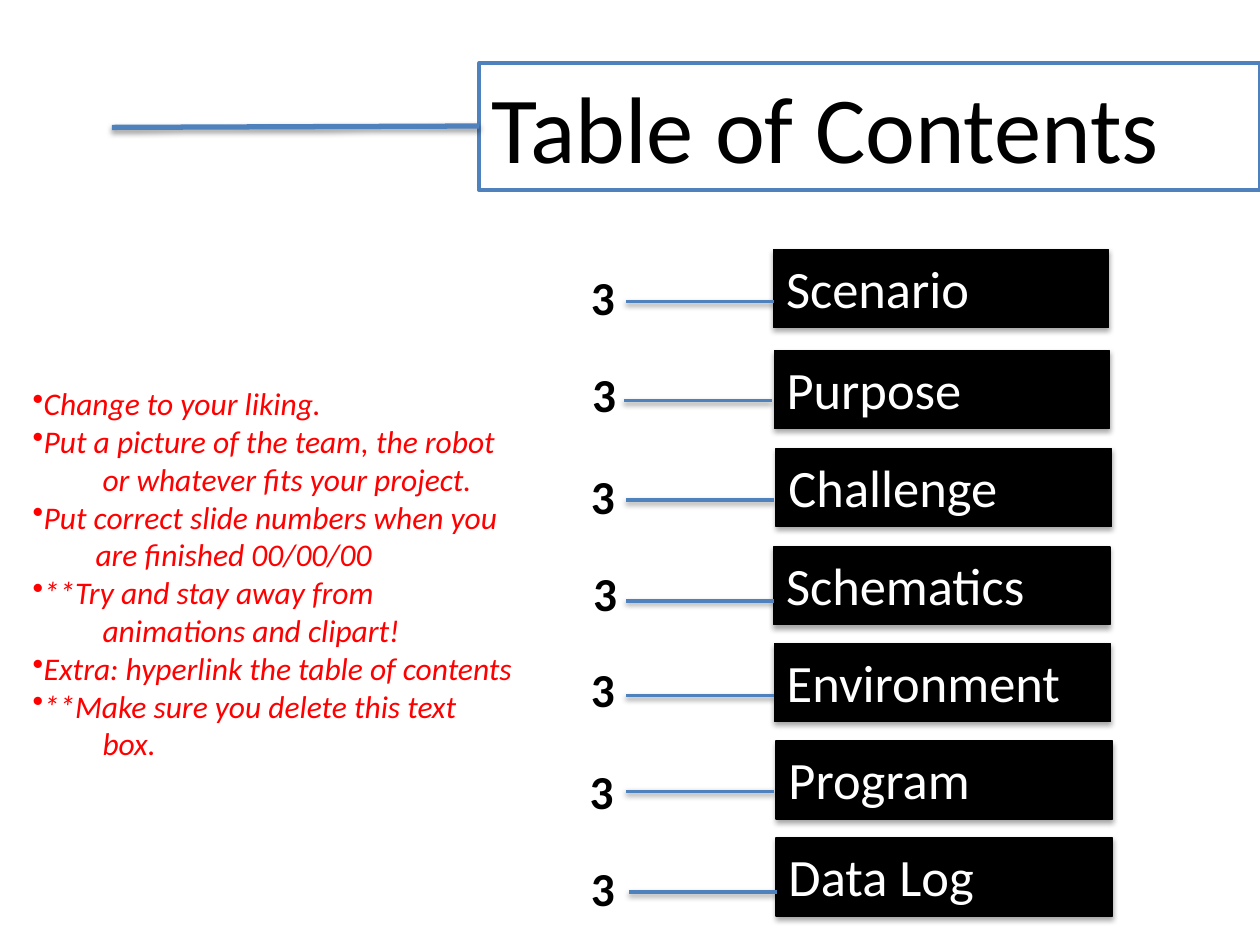
import pptx
import pptx.dml.color
import pptx.enum.shapes
import pptx.enum.text
import pptx.oxml
import pptx.oxml.ns
import pptx.util
from pptx.util import Pt

BLUE, BLACK, WHITE, RED = "4F81BD", "000000", "FFFFFF", "FF0000"


def add_text(shape, lines, size, color, bold=False, italic=False):
    """Write lines of (text, bullet, left margin) into a shape."""
    frame = shape.text_frame
    frame.word_wrap = True
    frame.vertical_anchor = pptx.enum.text.MSO_ANCHOR.TOP
    for i, (text, bullet, margin) in enumerate(lines):
        paragraph = frame.add_paragraph() if i else frame.paragraphs[0]
        paragraph.alignment = pptx.enum.text.PP_ALIGN.LEFT
        properties = paragraph._p.get_or_add_pPr()
        properties.set("marL", str(Pt(margin)))
        properties.set("indent", "0")
        if bullet:
            properties.append(pptx.oxml.parse_xml(
                f'<a:buChar {pptx.oxml.ns.nsdecls("a")} char="{bullet}"/>'))
        run = paragraph.add_run()
        run.text = text
        run.font.name = "Calibri"
        run.font.size = Pt(size)
        run.font.bold, run.font.italic = bold, italic
        run.font.color.rgb = pptx.dml.color.RGBColor.from_string(color)


def style(shape, line, width, fill=None, shadow=None):
    """Set line, fill and a downward shadow of (opacity %, distance)."""
    if fill:
        shape.shadow.inherit = False
        shape.fill.solid()
        shape.fill.fore_color.rgb = pptx.dml.color.RGBColor.from_string(fill)
    shape.line.color.rgb = pptx.dml.color.RGBColor.from_string(line)
    shape.line.width = Pt(width)
    if shadow:
        opacity, distance = shadow
        properties = shape._element.spPr
        for empty in properties.findall(pptx.oxml.ns.qn("a:effectLst")):
            properties.remove(empty)
        properties.append(pptx.oxml.parse_xml(
            f'<a:effectLst {pptx.oxml.ns.nsdecls("a")}>'
            f'<a:outerShdw blurRad="{Pt(3.1)}" dist="{Pt(distance)}" dir="5400000" rotWithShape="0">'
            f'<a:srgbClr val="000000"><a:alpha val="{opacity * 1000}"/></a:srgbClr>'
            '</a:outerShdw></a:effectLst>'))


deck = pptx.Presentation()
deck.slide_width, deck.slide_height = Pt(720), Pt(540)
shapes = deck.slides.add_slide(deck.slide_layouts[6]).shapes
RECTANGLE = pptx.enum.shapes.MSO_SHAPE.RECTANGLE
STRAIGHT = pptx.enum.shapes.MSO_CONNECTOR.STRAIGHT

title = shapes.add_shape(RECTANGLE, Pt(273.8), Pt(36), Pt(446.2), Pt(72.7))
style(title, BLUE, 2, fill=WHITE)
add_text(title, [("Table of Contents", None, 0)], 54, BLACK)

title_rule = shapes.add_connector(STRAIGHT, Pt(64), Pt(72.8), Pt(273.8), Pt(72))
style(title_rule, BLUE, 3, shadow=(38, 1.6))

advice = [
    ("Change to your liking.", "•", 0),
    ("Put a picture of the team, the robot", "•", 0),
    ("or whatever fits your project.", None, 40),
    ("Put correct slide numbers when you", "•", 0),
    ("are finished 00/00/00", None, 36),
    ("**Try and stay away from", "•", 0),
    ("animations and clipart!", None, 40),
    ("Extra: hyperlink the table of contents", "•", 0),
    ("**Make sure you delete this text", "•", 0),
    ("box.", None, 40),
]
instructions = shapes.add_textbox(Pt(11.5), Pt(216), Pt(289), Pt(247))
add_text(instructions, advice, 18, RED, italic=True)

# section, box left, box top, box width, rule left, rule y, number left, number top
contents = [
    ("Scenario", 442.1, 142.6, 191.5, 357.8, 172.4, 330.5, 149.8),
    ("Purpose", 442.4, 200.2, 191.5, 356.4, 229, 331.2, 205.2),
    ("Challenge", 443.5, 256.3, 191.5, 357.8, 285.8, 330.5, 263.5),
    ("Schematics", 442.1, 312.5, 192.2, 357.8, 343.4, 331.9, 319),
    ("Environment", 442.5, 367.9, 192.2, 357.8, 397.4, 330.5, 373.7),
    ("Program", 443.5, 423.4, 192.2, 357.8, 452.2, 329.8, 432),
    ("Data Log", 443.5, 478.8, 192.2, 359.3, 509.8, 330.5, 487.4),
]
for section, left, top, width, rule_left, rule_y, number_left, number_top in contents:
    box = shapes.add_shape(RECTANGLE, Pt(left), Pt(top), Pt(width), Pt(44.6))
    style(box, BLACK, 0.75, fill=BLACK, shadow=(35, 1.8))
    add_text(box, [(section, None, 0)], 30, WHITE)

    rule = shapes.add_connector(STRAIGHT, Pt(rule_left + 84.6), Pt(rule_y), Pt(rule_left), Pt(rule_y))
    style(rule, BLUE, 2, shadow=(38, 1.6))

    slide_number = shapes.add_textbox(Pt(number_left), Pt(number_top), Pt(36.7), Pt(39.6))
    add_text(slide_number, [("3", None, 0)], 27, BLACK, bold=True)

deck.save("out.pptx")
